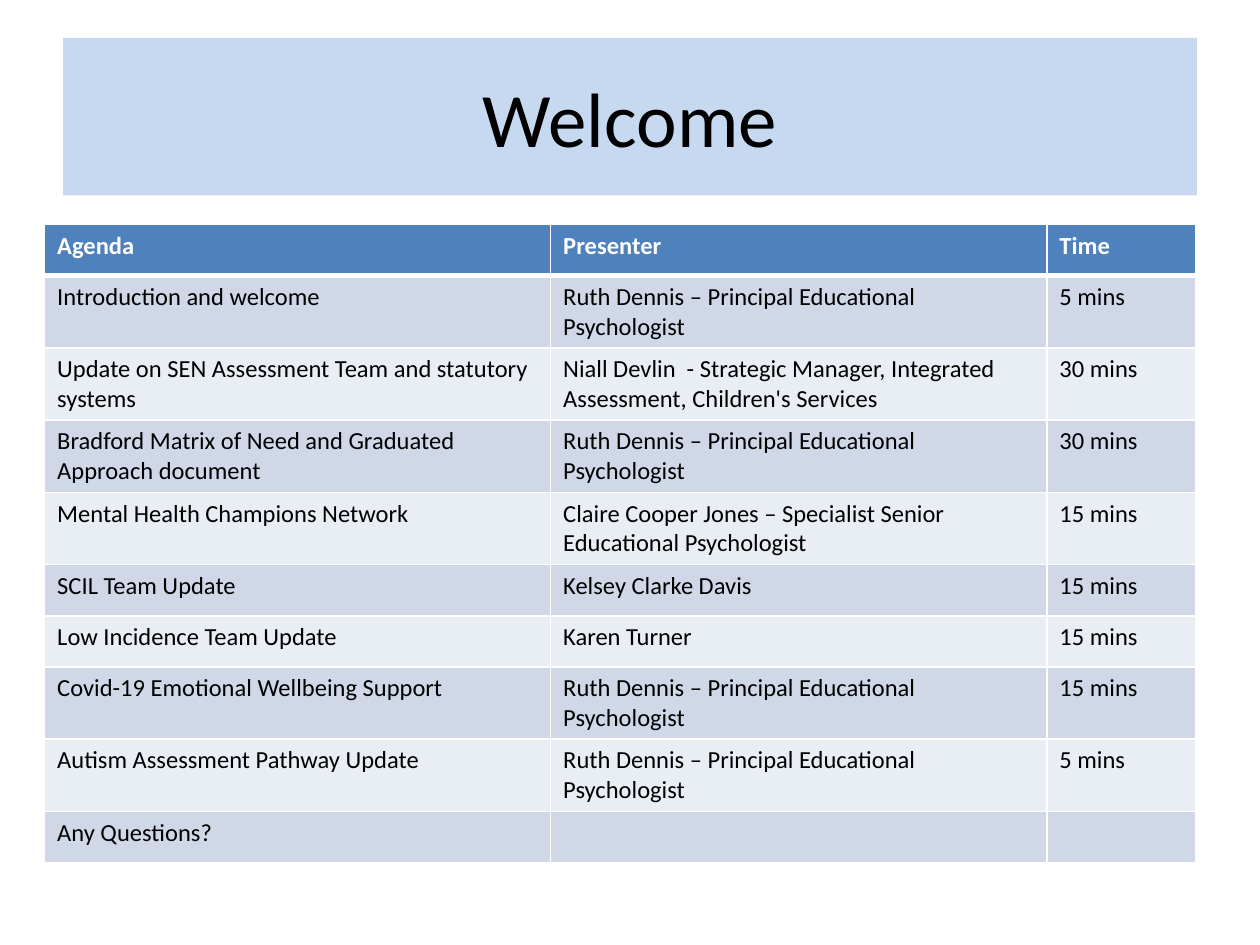
"""Build the Welcome slide: a title band above an agenda table."""
from lxml import etree
from pptx import Presentation
from pptx.dml.color import RGBColor
from pptx.enum.text import MSO_ANCHOR, PP_ALIGN
from pptx.oxml.ns import qn
from pptx.util import Pt

CENTER = PP_ALIGN.CENTER
LEFT = PP_ALIGN.LEFT
MIDDLE = MSO_ANCHOR.MIDDLE
FONT = "Calibri"
TITLE_ONLY = 5
COLORS = {
    "title": "C6D9F1",
    "header": "4F81BD",
    "odd": "D0D8E8",
    "even": "E9EDF4",
    "white": "FFFFFF",
    "black": "000000",
}
COLUMN_WIDTHS = (289.15, 283.55, 85.1)
ROW_HEIGHT = 29.2
PRINCIPAL = "Ruth Dennis – Principal Educational Psychologist"
AGENDA = (
    ("Agenda", "Presenter", "Time"),
    ("Introduction and welcome", PRINCIPAL, "5 mins"),
    ("Update on SEN Assessment Team and statutory systems",
     "Niall Devlin  - Strategic Manager, Integrated Assessment, Children's Services",
     "30 mins"),
    ("Bradford Matrix of Need and Graduated Approach document", PRINCIPAL, "30 mins"),
    ("Mental Health Champions Network",
     "Claire Cooper Jones – Specialist Senior Educational Psychologist", "15 mins"),
    ("SCIL Team Update", "Kelsey Clarke Davis", "15 mins"),
    ("Low Incidence Team Update", "Karen Turner", "15 mins"),
    ("Covid-19 Emotional Wellbeing Support", PRINCIPAL, "15 mins"),
    ("Autism Assessment Pathway Update", PRINCIPAL, "5 mins"),
    ("Any Questions?", "", ""),
)


def paint(target, color):
    """Give a shape or cell a solid fill."""
    target.fill.solid()
    target.fill.fore_color.rgb = RGBColor.from_string(COLORS[color])


def write(frame, text, size=14, color="black", bold=False, align=LEFT):
    """Write one formatted paragraph into a text frame."""
    para = frame.paragraphs[0]
    para.alignment = align
    span = para.add_run()
    span.text = text
    span.font.name = FONT
    span.font.size = Pt(size)
    span.font.bold = bold
    span.font.color.rgb = RGBColor.from_string(COLORS[color])


def add_borders(cell, top=1, bottom=1):
    """Draw white lines on the four sides of a cell."""
    properties = cell._tc.get_or_add_tcPr()
    for side, width in (("L", 1), ("R", 1), ("T", top), ("B", bottom)):
        line = etree.SubElement(properties, qn(f"a:ln{side}"), w=str(Pt(width)))
        fill = etree.SubElement(line, qn("a:solidFill"))
        etree.SubElement(fill, qn("a:srgbClr"), val=COLORS["white"])


def add_title(page, text):
    """Place the title on its coloured band."""
    title = page.shapes.title
    title.left, title.top, title.width, title.height = Pt(36), Pt(21.6), Pt(648), Pt(90)
    paint(title, "title")
    title.text_frame.vertical_anchor = MIDDLE
    write(title.text_frame, text, size=44, align=CENTER)


def add_agenda(page, rows):
    """Add the agenda table with a header and banded rows."""
    table = page.shapes.add_table(
        len(rows), len(COLUMN_WIDTHS), Pt(25.5), Pt(128.3),
        Pt(sum(COLUMN_WIDTHS)), Pt(ROW_HEIGHT * len(rows))).table
    for column, width in zip(table.columns, COLUMN_WIDTHS):
        column.width = Pt(width)
    for row_index, row in enumerate(rows):
        table.rows[row_index].height = Pt(ROW_HEIGHT)
        is_header = row_index == 0
        band = "header" if is_header else "odd" if row_index % 2 else "even"
        for column_index, text in enumerate(row):
            cell = table.cell(row_index, column_index)
            add_borders(cell, top=3 if row_index == 1 else 1,
                        bottom=3 if is_header else 1)
            paint(cell, band)
            if text:
                write(cell.text_frame, text, bold=is_header,
                      color="white" if is_header else "black")


def main():
    """Build and save the deck."""
    deck = Presentation()
    deck.slide_width, deck.slide_height = Pt(720), Pt(540)
    page = deck.slides.add_slide(deck.slide_layouts[TITLE_ONLY])
    add_title(page, "Welcome")
    add_agenda(page, AGENDA)
    deck.save("out.pptx")


if __name__ == "__main__":
    main()
